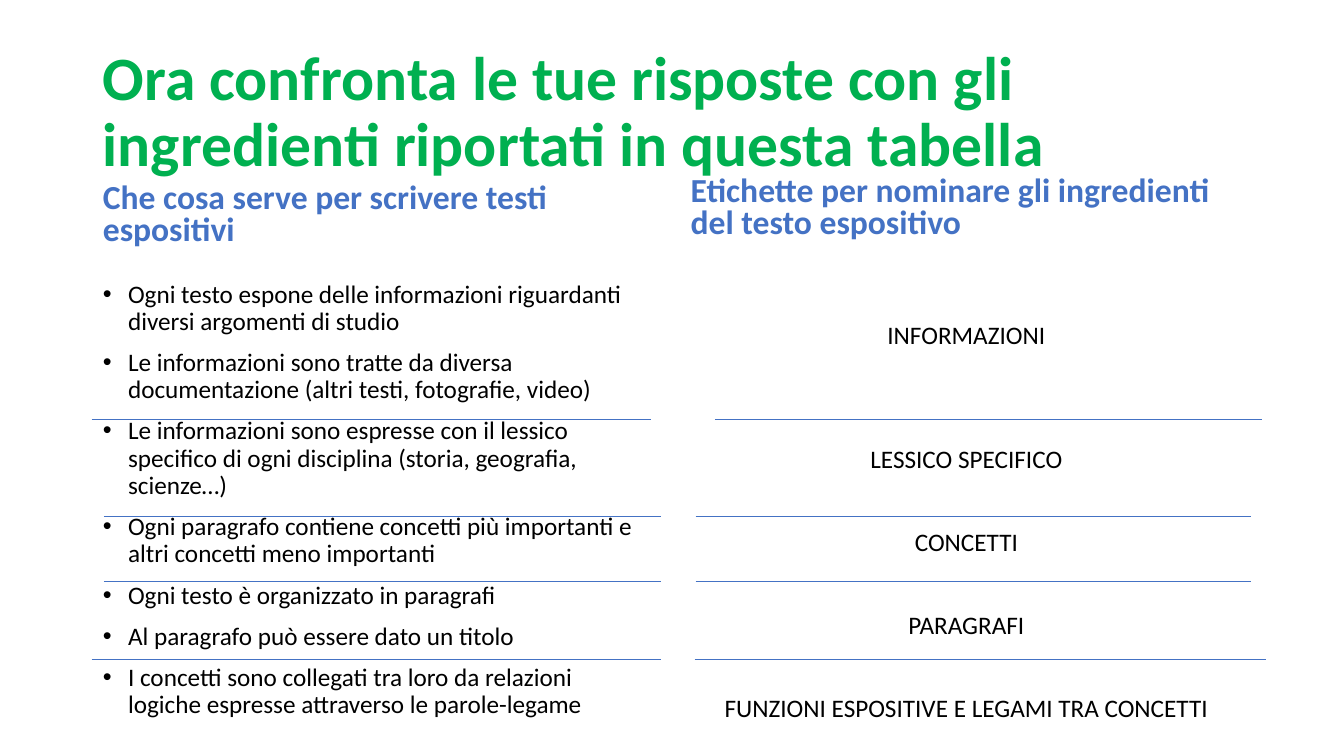
from dataclasses import dataclass

from lxml import etree
from pptx import Presentation
from pptx.dml.color import RGBColor
from pptx.enum.shapes import MSO_CONNECTOR
from pptx.enum.text import MSO_ANCHOR, MSO_AUTO_SIZE, PP_ALIGN
from pptx.oxml.ns import qn
from pptx.util import Inches, Pt

STRAIGHT = MSO_CONNECTOR.STRAIGHT
TOP, MIDDLE, BOTTOM = MSO_ANCHOR.TOP, MSO_ANCHOR.MIDDLE, MSO_ANCHOR.BOTTOM
LEFT, CENTER = PP_ALIGN.LEFT, PP_ALIGN.CENTER
NO_AUTOFIT = MSO_AUTO_SIZE.NONE
COMPARISON_LAYOUT = 3 + 1


@dataclass(frozen=True)
class Theme:
    font: str = "Calibri"
    green: str = "00B050"
    blue: str = "4472C4"
    black: str = "000000"
    title_size: int = 44
    heading_size: int = 24
    body_size: int = 18
    rule_width: float = 0.5
    paragraph_gap: float = 10
    row_step: float = 29.7  # one body line plus its paragraph gap


THEME = Theme()

SLIDE_WIDTH, SLIDE_HEIGHT = 13.33, 7.5
LEFT_COLUMN = (0.92, 5.64)
RIGHT_COLUMN = (6.75, 5.67)
BODY_TOP, BODY_HEIGHT = 2.74, 4.63
HEADING_HEIGHT = 0.78

TITLE = "Ora confronta le tue risposte con gli ingredienti riportati in questa tabella"
NEEDS_HEADING = "Che cosa serve per scrivere testi espositivi"
LABELS_HEADING = "Etichette per nominare gli ingredienti del testo espositivo"
NEEDS = [
    "Ogni testo espone delle informazioni riguardanti diversi argomenti di studio",
    "Le informazioni sono tratte da diversa documentazione (altri testi, fotografie, video)",
    "Le informazioni sono espresse con il lessico specifico di ogni disciplina "
    "(storia, geografia, scienze…)",
    "Ogni paragrafo contiene concetti più importanti e altri concetti meno importanti",
    "Ogni testo è organizzato in paragrafi",
    "Al paragrafo può essere dato un titolo",
    "I concetti sono collegati tra loro da relazioni logiche espresse attraverso le parole-legame",
]
# Each label with the number of empty rows above it
LABELS = [
    ("INFORMAZIONI", 1),
    ("LESSICO SPECIFICO", 2),
    ("CONCETTI", 1),
    ("PARAGRAFI", 1),
    ("FUNZIONI ESPOSITIVE E LEGAMI TRA CONCETTI", 1),
]
# Height of each row divider, then its span in the left and right columns
DIVIDERS = [
    (4.16, (0.91, 6.46), (7.09, 12.52)),
    (5.12, (1.03, 6.56), (6.9, 12.41)),
    (5.77, (1.03, 6.56), (6.9, 12.41)),
    (6.54, (0.91, 6.56), (6.89, 12.56)),
]


def place(placeholder, column, top, height, anchor):
    left, width = column
    placeholder.left, placeholder.top = Inches(left), Inches(top)
    placeholder.width, placeholder.height = Inches(width), Inches(height)
    frame = placeholder.text_frame
    frame.word_wrap = True
    frame.auto_size = NO_AUTOFIT
    frame.vertical_anchor = anchor
    return frame


def set_bullet(paragraph, bulleted):
    properties = paragraph._p.get_or_add_pPr()
    indent = Inches(0.25) if bulleted else 0
    properties.set("marL", str(indent))
    properties.set("indent", str(-indent))
    if bulleted:
        etree.SubElement(properties, qn("a:buFont"), typeface="Arial")
        etree.SubElement(properties, qn("a:buChar"), char="•")
    else:
        etree.SubElement(properties, qn("a:buNone"))


def write(paragraph, text, *, size=THEME.body_size, color=THEME.black, bold=False,
          align=LEFT, line_spacing=0.9, before=THEME.paragraph_gap, bulleted=False):
    paragraph.alignment = align
    paragraph.line_spacing = line_spacing
    paragraph.space_before = Pt(before)
    set_bullet(paragraph, bulleted)
    run = paragraph.add_run()
    run.text = text
    run.font.name = THEME.font
    run.font.size = Pt(size)
    run.font.bold = bold
    run.font.color.rgb = RGBColor.from_string(color)


def paragraphs_for(frame, items):
    """Pair each item with a paragraph, using the frame's first one."""
    for index, item in enumerate(items):
        yield (frame.add_paragraph() if index else frame.paragraphs[0]), item


def add_heading(placeholder, column, top, text):
    frame = place(placeholder, column, top, HEADING_HEIGHT, BOTTOM)
    write(frame.paragraphs[0], text, size=THEME.heading_size, color=THEME.blue,
          bold=True, line_spacing=0.8)


def add_needs(placeholder):
    frame = place(placeholder, LEFT_COLUMN, BODY_TOP, BODY_HEIGHT, TOP)
    for paragraph, need in paragraphs_for(frame, NEEDS):
        write(paragraph, need, bulleted=True)


def add_labels(placeholder):
    """Space the labels by rows; the rows above the first become the top inset."""
    frame = place(placeholder, RIGHT_COLUMN, BODY_TOP, BODY_HEIGHT, TOP)
    frame.margin_top = Inches(0.05) + Pt(LABELS[0][1] * THEME.row_step)
    for paragraph, (label, rows_above) in paragraphs_for(frame, LABELS):
        is_first = label == LABELS[0][0]
        before = 0 if is_first else THEME.paragraph_gap + rows_above * THEME.row_step
        write(paragraph, label, align=CENTER, before=before)


def add_divider(slide, start, end, height):
    divider = slide.shapes.add_connector(
        STRAIGHT, Inches(start), Inches(height), Inches(end), Inches(height))
    divider.line.color.rgb = RGBColor.from_string(THEME.blue)
    divider.line.width = Pt(THEME.rule_width)
    etree.SubElement(divider._element.spPr, qn("a:effectLst"))


def main():
    presentation = Presentation()
    presentation.slide_width = Inches(SLIDE_WIDTH)
    presentation.slide_height = Inches(SLIDE_HEIGHT)
    slide = presentation.slides.add_slide(presentation.slide_layouts[COMPARISON_LAYOUT])
    title, needs_heading, needs, labels_heading, labels = slide.placeholders

    title_frame = place(title, (0.92, 11.5), 0.4, 1.45, MIDDLE)
    write(title_frame.paragraphs[0], TITLE, size=THEME.title_size, color=THEME.green,
          bold=True, before=0)
    add_heading(needs_heading, LEFT_COLUMN, 1.73, NEEDS_HEADING)
    add_needs(needs)
    add_heading(labels_heading, RIGHT_COLUMN, 1.66, LABELS_HEADING)
    add_labels(labels)

    for height, *spans in DIVIDERS:
        for start, end in spans:
            add_divider(slide, start, end, height)

    presentation.save("out.pptx")


if __name__ == "__main__":
    main()
